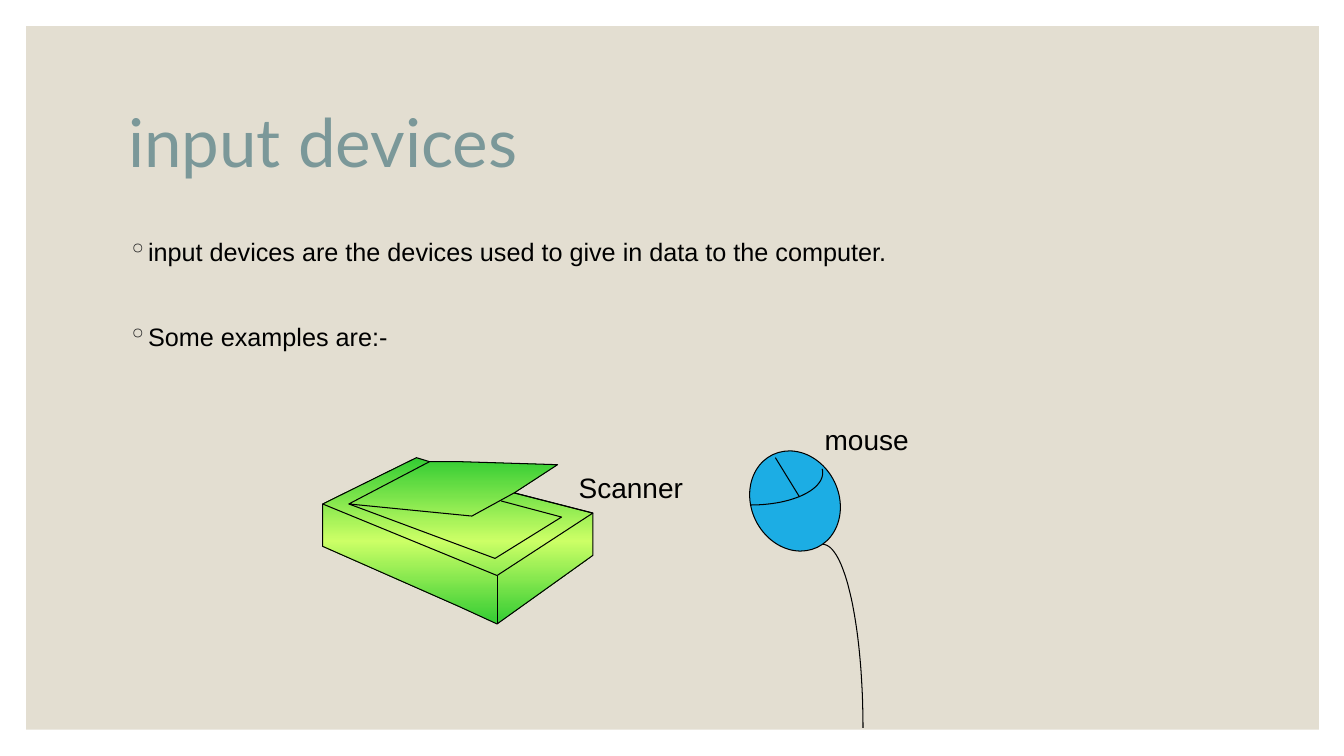
"""Builds the slide about input devices."""
from copy import deepcopy
from math import cos, radians, sin

from pptx import Presentation
from pptx.dml.color import RGBColor
from pptx.enum.shapes import MSO_CONNECTOR, MSO_SHAPE
from pptx.enum.text import MSO_ANCHOR, MSO_AUTO_SIZE, PP_ALIGN
from pptx.oxml.ns import qn
from pptx.util import Inches, Pt

RECTANGLE = MSO_SHAPE.RECTANGLE
OVAL = MSO_SHAPE.OVAL
STRAIGHT = MSO_CONNECTOR.STRAIGHT
MIDDLE = MSO_ANCHOR.MIDDLE
NO_AUTOFIT = MSO_AUTO_SIZE.NONE
LEFT = PP_ALIGN.LEFT

TITLE_ONLY = 5
COLUMNS, ROWS = 133.3, 75
SAND, TEAL, BLACK, GREY = "E3DED1", "7B9899", "000000", "262626"
BLUE, GREEN, LIME = "1CADE4", "33CC33", "CCFF66"

BULLETS = [
    ("input devices are the devices used to give in data to the computer.", 9),
    ("Some examples are:-", 39),
]
SCANNER_OUTLINE = [
    (51, 48.9), (58.8, 50.9), (58.8, 55.1), (49.3, 61.9), (45.6, 60.2),
    (32, 54.2), (32, 50), (41.3, 45.4), (42.6, 45.8), (45.6, 45.8),
    (55.3, 46.1),
]
SCANNER_EDGES = [
    [(51, 48.9), (58.8, 50.9), (49.3, 57.1), (32, 50)],
    [(42.6, 45.8), (34.6, 50), (46.8, 51.2), (51, 48.9)],
    [(49.7, 49.7), (55.7, 51.3), (49.1, 55.4), (34.6, 50)],
    [(49.3, 61.9), (49.3, 57.1)],
]


def color(value):
    """Turn a hex string into a colour."""
    return RGBColor.from_string(value)


def arc(center, radii, start, end, steps=40):
    """Return points along an elliptical arc, with angles in degrees."""
    angles = [radians(start + (end - start) * step / steps)
              for step in range(steps + 1)]
    return [(center[0] + radii[0] * cos(angle), center[1] + radii[1] * sin(angle))
            for angle in angles]


class SlideBuilder:
    """Holds the style and the current slide, measured in grid cells."""

    text_font = "Arial"
    title_font = "Lato"
    line_width = Pt(0.75)

    def __init__(self, presentation):
        """Add a title-only slide and find the size of a grid cell."""
        self.column = presentation.slide_width / COLUMNS
        self.row = presentation.slide_height / ROWS
        layout = presentation.slide_layouts[TITLE_ONLY]
        self.slide = presentation.slides.add_slide(layout)
        self.shapes = self.slide.shapes

    def place(self, *cells):
        """Convert alternating columns and rows to slide lengths."""
        return [round(cell * (self.row if index % 2 else self.column))
                for index, cell in enumerate(cells)]

    def outline(self, shape):
        """Give a shape the thin black line."""
        shape.line.color.rgb = color(BLACK)
        shape.line.width = self.line_width

    def format_runs(self, paragraph, font, size, hex_color):
        """Set the font of every run in a paragraph."""
        for run in paragraph.runs:
            run.font.name = font
            run.font.size = Pt(size)
            run.font.color.rgb = color(hex_color)

    def title(self, text, *cells):
        """Fill and place the title placeholder."""
        shape = self.shapes.title
        shape.left, shape.top, shape.width, shape.height = self.place(*cells)
        frame = shape.text_frame
        frame.text = text
        frame.auto_size = NO_AUTOFIT
        frame.vertical_anchor = MIDDLE
        paragraph = frame.paragraphs[0]
        paragraph.alignment = LEFT
        paragraph.line_spacing = 0.9
        self.format_runs(paragraph, self.title_font, 48, TEAL)

    def panel(self, *cells):
        """Add the background panel behind the title."""
        shape = self.solid(RECTANGLE, SAND, *cells)
        shape.line.fill.background()
        self.shapes.title.element.addprevious(shape.element)

    def solid(self, kind, hex_color, *cells, rotation=0):
        """Add a preset shape with a plain fill."""
        shape = self.shapes.add_shape(kind, *self.place(*cells))
        shape.shadow.inherit = False
        shape.fill.solid()
        shape.fill.fore_color.rgb = color(hex_color)
        shape.rotation = rotation
        self.outline(shape)
        return shape

    def text(self, text, size, *cells):
        """Add a wrapped text box and return its first paragraph."""
        frame = self.shapes.add_textbox(*self.place(*cells)).text_frame
        frame.word_wrap = True
        frame.text = text
        self.format_runs(frame.paragraphs[0], self.text_font, size, BLACK)
        return frame

    def bullets(self, items, *cells):
        """Add a bulleted list from pairs of text and space before."""
        frame = self.text("\n".join(text for text, _ in items), 18, *cells)
        for paragraph, (_, space) in zip(frame.paragraphs, items):
            paragraph.space_before = Pt(space)
            self.format_runs(paragraph, self.text_font, 18, BLACK)
            properties = paragraph._p.get_or_add_pPr()
            properties.set("marL", str(Inches(0.2)))
            properties.set("indent", str(-Inches(0.2)))
            bullet_color = properties.makeelement(qn("a:buClr"), {})
            bullet_color.append(
                properties.makeelement(qn("a:srgbClr"), {"val": GREY}))
            properties.append(bullet_color)
            properties.append(
                properties.makeelement(qn("a:buChar"), {"char": "◦"}))

    def freeform(self, contours, close=False):
        """Draw contours as one unfilled shape."""
        builder = self.shapes.build_freeform(*self.place(*contours[0][0]))
        for index, contour in enumerate(contours):
            if index:
                builder.move_to(*self.place(*contour[0]))
            points = [self.place(*point) for point in contour[1:]]
            builder.add_line_segments(points, close=close)
        shape = builder.convert_to_shape()
        shape.shadow.inherit = False
        shape.fill.background()
        self.outline(shape)
        return shape

    def gradient(self, shape, stops):
        """Fill a shape with a vertical gradient of three stops."""
        shape.fill.gradient()
        shape.fill.gradient_angle = 90
        stop_list = shape.element.xpath(".//a:gsLst")[0]
        stop_list.append(deepcopy(stop_list[0]))
        for stop, (position, hex_color) in zip(shape.fill.gradient_stops, stops):
            stop.position = position
            stop.color.rgb = color(hex_color)

    def line(self, *cells):
        """Add a straight line without a shadow."""
        connector = self.shapes.add_connector(STRAIGHT, *self.place(*cells))
        self.outline(connector)
        properties = connector.element.spPr
        properties.append(properties.makeelement(qn("a:effectLst"), {}))


def main():
    """Build and save the presentation."""
    presentation = Presentation()
    presentation.slide_width = Inches(13.33)
    presentation.slide_height = Inches(7.5)
    builder = SlideBuilder(presentation)

    builder.title("input devices", 11.7, 7, 110, 15)
    builder.panel(2.6, 2.6, 128.2, 69.8)
    builder.bullets(BULLETS, 11.7, 23, 110, 43)

    scanner = builder.freeform([SCANNER_OUTLINE], close=True)
    builder.gradient(scanner, [(0, GREEN), (0.5, LIME), (1, GREEN)])
    builder.freeform(SCANNER_EDGES)
    builder.text("Scanner", 20, 56.4, 46.2, 27.6, 4.3)

    builder.solid(OVAL, BLUE, 74.5, 44.6, 8.7, 10.2, rotation=334.3)
    builder.freeform([arc((74.5, 46.9), (7.1, 3.2), 90, -7)])
    builder.line(76.9, 45.4, 79.3, 49.3)
    builder.freeform([arc((81.6, 72.2), (4, 18.2), -90, 0)])
    builder.text("mouse", 20, 80.8, 41.4, 21.3, 4.3)

    presentation.save("out.pptx")


if __name__ == "__main__":
    main()
